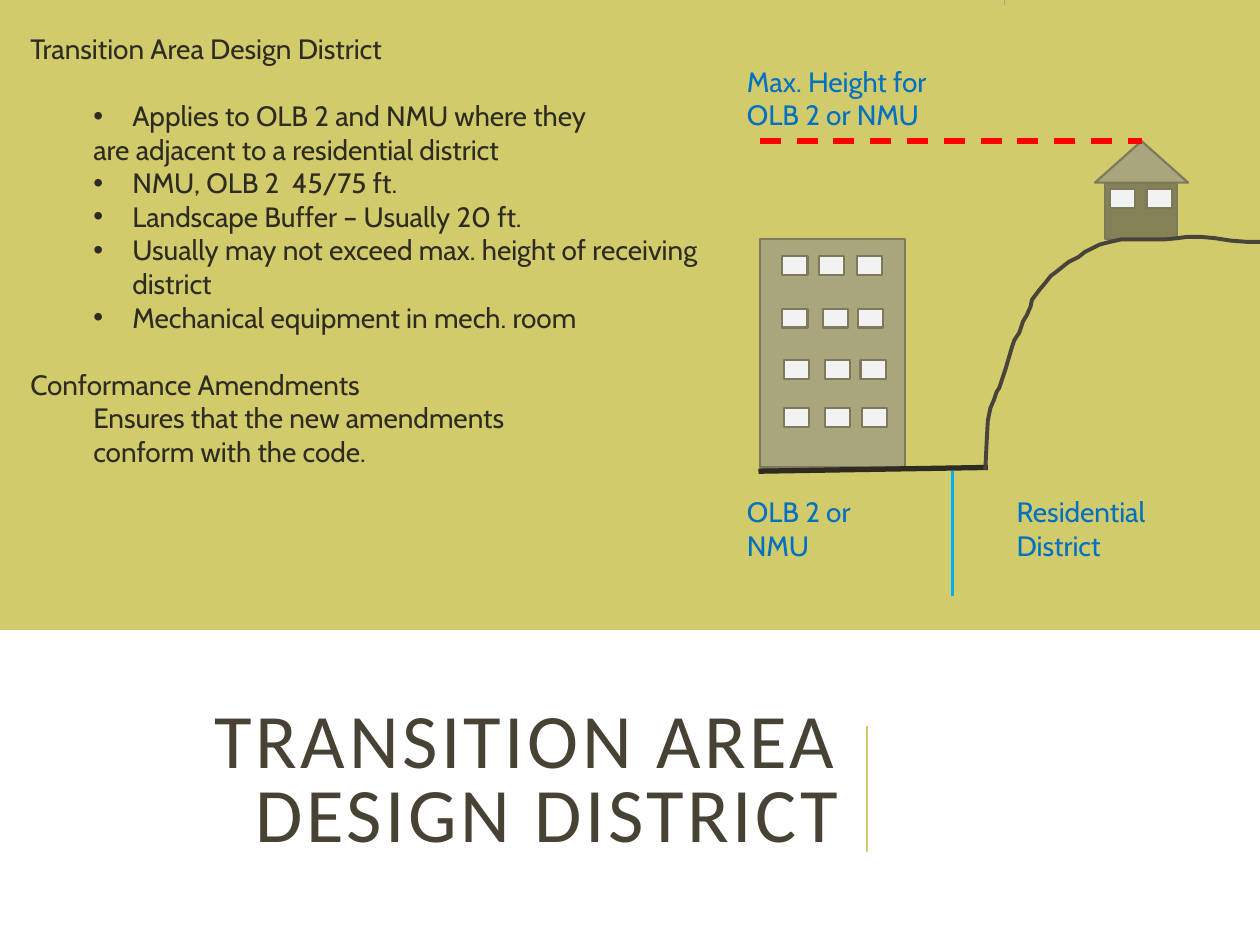
from lxml import etree
from pptx import Presentation
from pptx import util as u
from pptx.dml.color import RGBColor
from pptx.enum import dml, shapes, text
from pptx.oxml.ns import qn

Inches, Pt = u.Inches, u.Pt
KIND = shapes.MSO_SHAPE


def hue(code):
    return RGBColor.from_string(code)


def draw(kind, box, fill, edge=None):
    shape = slide.shapes.add_shape(kind, *map(Inches, box))
    shape.shadow.inherit = False
    shape.fill.solid()
    shape.fill.fore_color.rgb = hue(fill)
    if edge:
        shape.line.color.rgb = hue(edge)
        shape.line.width = Pt(1.25)
    else:
        shape.line.fill.background()
    return shape


deck = Presentation()
deck.slide_width, deck.slide_height = Inches(10), Inches(7.5)
slide = deck.slides.add_slide(deck.slide_layouts[1])
title, body = slide.placeholders

# Olive field, sent behind the text
field = draw(KIND.RECTANGLE, (0, 0, 10, 5), "D2CB6C")
slide.shapes._spTree.insert(2, field._element)

# Title
title.left, title.top, title.width, title.height = map(Inches, (0.38, 5.42, 6.38, 1.6))
title.text_frame.text = "TRANSITION AREA DESIGN DISTRICT"
title.text_frame.auto_size = text.MSO_AUTO_SIZE.NONE
title.text_frame.vertical_anchor = text.MSO_ANCHOR.MIDDLE
head = title.text_frame.paragraphs[0]
head.alignment = text.PP_ALIGN.RIGHT
head.line_spacing = 0.8
font = head.runs[0].font
font.name, font.size, font.color.rgb = "Calibri", Pt(44), hue("474233")
head.runs[0]._r.get_or_add_rPr().set("spc", "200")

# Body list: style, gap before in points, wording
styles = {"head": (0, 0, 0), "bullet": (1, 0.81, -0.31), "plain": (1, 0.5, 0)}
items = [
    ("head", 0, "Transition Area Design District"),
    ("bullet", 19.2, "Applies to OLB 2 and NMU where they"),
    ("plain", 0, "are adjacent to a residential district"),
    ("bullet", 0, "NMU, OLB 2  45/75 ft."),
    ("bullet", 0, "Landscape Buffer – Usually 20 ft."),
    ("bullet", 0, "Usually may not exceed max. height of receiving district"),
    ("bullet", 0, "Mechanical equipment in mech. room"),
    ("head", 19.2, "Conformance Amendments"),
    ("plain", 0, "Ensures that the new amendments"),
    ("plain", 0, "conform with the code."),
]
body.left, body.top, body.width, body.height = map(Inches, (0.14, 0.2, 5.59, 4.68))
frame = body.text_frame
frame.text = "\n".join(item[2] for item in items)
frame.auto_size = text.MSO_AUTO_SIZE.NONE
frame.vertical_anchor = text.MSO_ANCHOR.TOP
for para, (style, gap, _) in zip(frame.paragraphs, items):
    level, left, hang = styles[style]
    para.level = level
    para.space_before = Pt(gap)
    props = para._p.get_or_add_pPr()
    props.set("marL", str(Inches(left)))
    props.set("indent", str(Inches(hang)))
    if style == "bullet":
        etree.SubElement(props, qn("a:buChar")).set("char", "•")
    else:
        etree.SubElement(props, qn("a:buNone"))
    font = para.runs[0].font
    font.name, font.size, font.color.rgb = "Cabin", Pt(16), hue("2E2B21")

# Office block and house
EDGE = "7D7A5C"
draw(KIND.FLOWCHART_PROCESS, (6.03, 1.9, 1.15, 1.81), "A9A57C", EDGE)
draw(KIND.RECTANGLE, (8.77, 1.45, 0.57, 0.45), "858157", EDGE)
draw(KIND.ISOSCELES_TRIANGLE, (8.69, 1.12, 0.74, 0.33), "A9A57C", EDGE)

# Windows, one row per entry: top, then left edges
rows = [
    (2.03, (6.21, 6.5, 6.8)),
    (2.45, (6.21, 6.53, 6.81)),
    (2.86, (6.22, 6.55, 6.83)),
    (3.24, (6.22, 6.55, 6.84)),
    (1.5, (8.81, 9.1)),
]
for top, lefts in rows:
    for left in lefts:
        draw(KIND.RECTANGLE, (left, top, 0.2, 0.15), "F2F2F2", EDGE)

# Lines: title rule, ground, height limit, top tick, district border
lines = [
    ((6.88, 6.76, 6.88, 5.76), "D2CB6C", 1.5, False),
    ((6.02, 3.74, 7.84, 3.71), "2E2B21", 3, False),
    ((6.03, 1.12, 9.06, 1.12), "FF0000", 3, True),
    ((7.97, 0, 7.97, 0.04), "A9A57C", 0.75, False),
    ((7.56, 4.73, 7.56, 3.74), "00B0F0", 1.5, False),
]
for ends, code, width, dashed in lines:
    line = slide.shapes.add_connector(shapes.MSO_CONNECTOR.STRAIGHT, *map(Inches, ends))
    line.line.color.rgb = hue(code)
    line.line.width = Pt(width)
    if dashed:
        line.line.dash_style = dml.MSO_LINE.DASH
    etree.SubElement(line._element.spPr, qn("a:effectLst"))

# Hillside
slope = [
    (7.82, 3.73), (7.83, 3.52), (7.84, 3.34), (7.86, 3.24), (7.89, 3.17), (7.91, 3.11),
    (7.93, 3.08), (7.95, 3.02), (7.98, 2.93), (8.03, 2.76), (8.05, 2.7), (8.09, 2.64),
    (8.12, 2.55), (8.15, 2.5), (8.18, 2.43), (8.19, 2.38), (8.25, 2.3), (8.3, 2.24),
    (8.34, 2.19), (8.38, 2.16), (8.43, 2.12), (8.48, 2.08), (8.56, 2.04), (8.61, 2),
    (8.67, 1.97), (8.73, 1.94), (8.81, 1.92), (8.9, 1.9), (9.25, 1.9), (9.35, 1.89),
    (9.42, 1.88), (9.53, 1.88), (9.64, 1.89), (9.77, 1.91), (9.9, 1.92), (10, 1.92),
]
points = [(Inches(x), Inches(y)) for x, y in slope]
path = slide.shapes.build_freeform(*points[0])
path.add_line_segments(points[1:], close=False)
hill = path.convert_to_shape()
hill.shadow.inherit = False
hill.fill.background()
hill.line.color.rgb = hue("48443B")
hill.line.width = Pt(2.25)

# Blue labels
labels = [
    ((5.83, 3.88, 1.08, 0.64), "OLB 2 or NMU"),
    ((7.97, 3.88, 1.85, 0.64), "Residential District"),
    ((5.83, 0.46, 2.51, 0.94), "Max. Height for\nOLB 2 or NMU"),
]
for box, words in labels:
    frame = slide.shapes.add_textbox(*map(Inches, box)).text_frame
    frame.word_wrap = True
    frame.text = words
    for para in frame.paragraphs:
        font = para.runs[0].font
        font.name, font.size, font.color.rgb = "Cabin", Pt(16), hue("0070C0")

deck.save("out.pptx")
